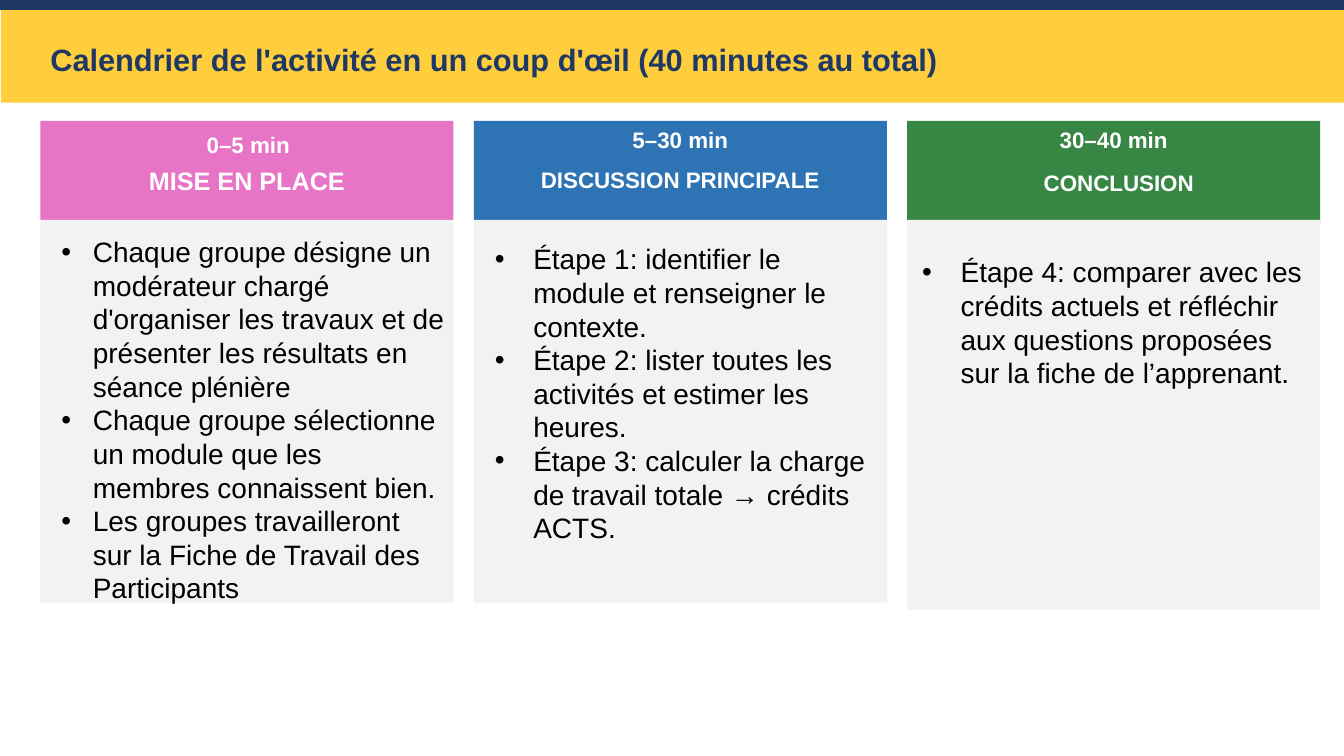
from dataclasses import dataclass

from pptx import Presentation
from pptx.dml.color import RGBColor as Rgb
from pptx.enum.shapes import MSO_SHAPE as Kind
from pptx.enum.text import PP_ALIGN as Align
from pptx.oxml.ns import qn
from pptx.util import Cm, Pt
from lxml.etree import SubElement as Sub

WIDE, HIGH = 33.87, 19.05
INK = {"navy": "1F3864", "gold": "FFCE3C", "pink": "E874C7", "blue": "2E74B5",
       "green": "378644", "gray": "F2F2F2", "white": "FFFFFF", "black": "000000"}


@dataclass
class Stage:
    time: str
    name: str
    items: list
    color: str
    time_at: tuple = (0, 0)     # offsets from the column's corner, in cm
    name_at: tuple = (0, 1.02)
    list_at: tuple = (0.28, 2.92)
    size: int = 16
    indent: float = 0.97
    head: float = 2.49
    body: float = 9.65


STAGES = [
    Stage("0–5 min", "MISE EN PLACE", [
        "Chaque groupe désigne un modérateur chargé d'organiser les travaux "
        "et de présenter les résultats en séance plénière",
        "Chaque groupe sélectionne un module que les membres connaissent bien.",
        "Les groupes travailleront sur la Fiche de Travail des Participants",
    ], "pink", time_at=(0.03, 0.13), name_at=(0, 0.99), list_at=(0.28, 2.74),
        size=18, indent=0.79),
    Stage("5–30 min", "DISCUSSION PRINCIPALE", [
        "Étape 1: identifier le module et renseigner le contexte.",
        "Étape 2: lister toutes les activités et estimer les heures.",
        "Étape 3: calculer la charge de travail totale → crédits ACTS.",
    ], "blue"),
    Stage("30–40 min", "CONCLUSION", [
        "Étape 4: comparer avec les crédits actuels et réfléchir aux questions "
        "proposées sur la fiche de l’apprenant.",
    ], "green", name_at=(0.13, 1.09), list_at=(0.13, 3.25), head=2.59, body=9.83),
]


def add_rect(slide, box, color):
    rect = slide.shapes.add_shape(Kind.RECTANGLE, *map(Cm, box))
    rect.shadow.inherit = False
    rect.fill.solid()
    rect.fill.fore_color.rgb = Rgb.from_string(INK[color])
    rect.line.fill.background()


def add_text(slide, box, lines, size, color, bold=False, align=Align.LEFT, indent=0):
    frame = slide.shapes.add_textbox(*map(Cm, box)).text_frame
    frame.word_wrap = True
    for i, line in enumerate(lines):
        para = frame.add_paragraph() if i else frame.paragraphs[0]
        para.text = line
        para.alignment = align
        if indent:
            props = para._p.get_or_add_pPr()
            props.set("marL", str(Cm(indent)))
            props.set("indent", str(-Cm(indent)))
            Sub(props, qn("a:buFont")).set("typeface", "Arial")
            Sub(props, qn("a:buChar")).set("char", "•")
        font = para.font
        font.name, font.size, font.bold = "Arial", Pt(size), bold
        font.color.rgb = Rgb.from_string(INK[color])


def add_banner(slide, x, y, w, h):
    add_rect(slide, (x + 0.02, y, w, h), "gold")
    add_rect(slide, (x, y, w, 0.25), "navy")
    add_text(slide, (x + 1.02, y + 0.89, 30.48, 1.4),
             ["Calendrier de l'activité en un coup d'œil (40 minutes au total)"],
             22, "navy", bold=True)


def add_stage(slide, x, y, w, stage):
    def place(offset, width, height):
        return x + offset[0], y + offset[1], width, height

    # Coloured heading
    add_rect(slide, (x, y, w, stage.head), stage.color)
    add_text(slide, place(stage.time_at, w, 0.94), [stage.time],
             16, "white", True, Align.CENTER)
    add_text(slide, place(stage.name_at, w, 0.94), [stage.name],
             stage.size, "white", True, Align.CENTER)
    # Bulleted body
    add_rect(slide, (x, y + 2.49, w, stage.body), "gray")
    add_text(slide, place(stage.list_at, 10.16, stage.body), stage.items,
             20, "black", indent=stage.indent)


def main():
    deck = Presentation()
    deck.slide_width, deck.slide_height = Cm(WIDE), Cm(HIGH)
    slide = deck.slides.add_slide(deck.slide_layouts[6])
    add_banner(slide, 0, 0, WIDE, 2.59)
    width, gap = 10.41, 0.51
    for i, stage in enumerate(STAGES):
        add_stage(slide, 1.02 + i * (width + gap), 3.05, width, stage)
    deck.save("out.pptx")


if __name__ == "__main__":
    main()
